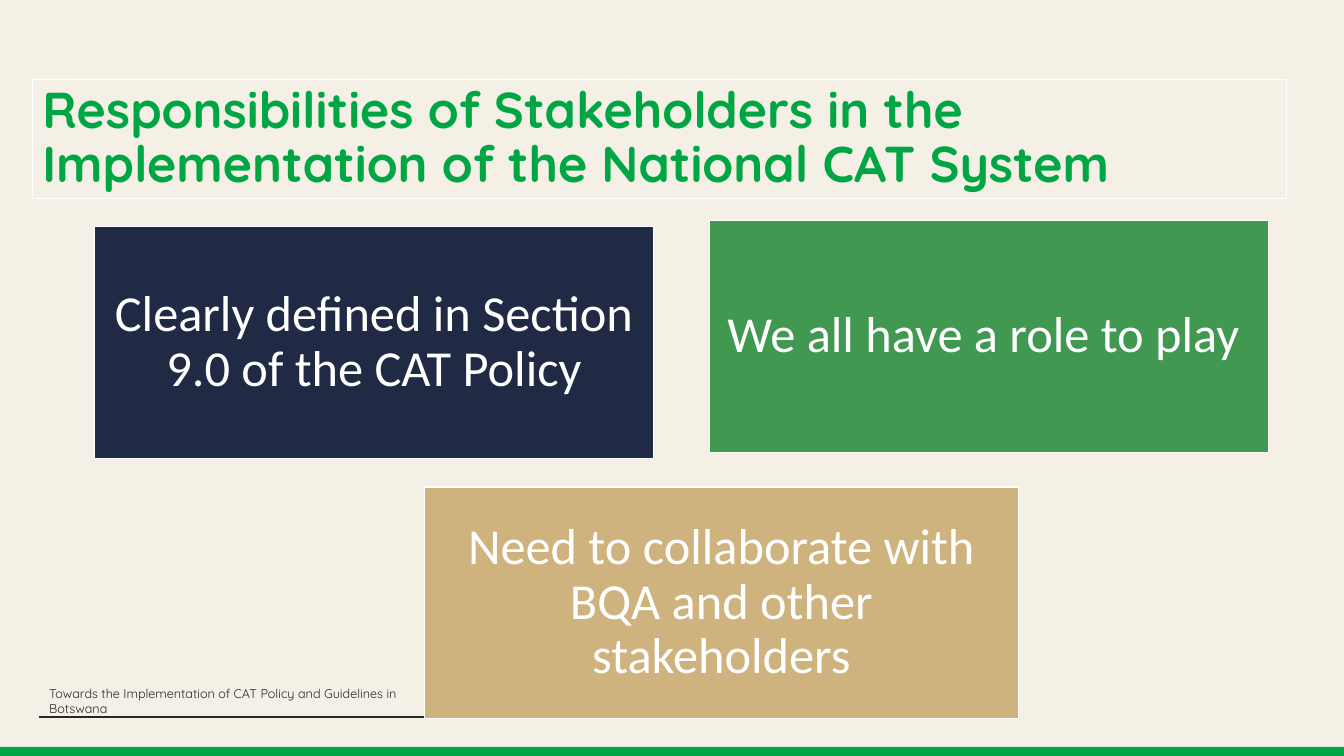
from dataclasses import dataclass

from pptx import Presentation
from pptx.dml.color import RGBColor
from pptx.enum.shapes import MSO_CONNECTOR as CONN, MSO_SHAPE as SHAPE
from pptx.enum.text import MSO_ANCHOR as ANCHOR, MSO_AUTO_SIZE as AUTO, PP_ALIGN as ALIGN
from pptx.oxml.ns import qn
from pptx.util import Inches, Pt
from lxml.etree import SubElement


@dataclass(frozen=True)
class Theme:
    cream: str = "F5F0E5"
    green: str = "00A643"
    ink: str = "24282A"
    white: str = "FFFFFF"
    navy: str = "202A44"
    leaf: str = "409851"
    sand: str = "CEB37E"
    heading_font: str = "Quicksand"
    card_font: str = "Calibri"
    large: int = 36
    small: int = 9


@dataclass(frozen=True)
class Card:
    text: str
    left: float
    top: float
    width: float
    fill: str


THEME = Theme()
CARD_HEIGHT = 2.3
CARDS = [
    Card("Clearly defined in Section 9.0 of the CAT Policy", 0.94, 2.25, 5.54, THEME.navy),
    Card("We all have a role to play ", 7.04, 2.19, 5.54, THEME.leaf),
    Card("Need to collaborate with BQA and other stakeholders", 4.21, 4.83, 5.89, THEME.sand),
]


def rgb(color: str) -> RGBColor:
    return RGBColor.from_string(color)


def place(s, left: float, top: float, width: float, height: float) -> None:
    s.left, s.top, s.width, s.height = map(Inches, (left, top, width, height))


def paint(s, fill: str, line: str | None = None) -> None:
    s.fill.solid()
    s.fill.fore_color.rgb = rgb(fill)
    if line:
        s.line.color.rgb = rgb(line)
        s.line.width = Pt(1)
    else:
        s.line.fill.background()


def write(s, text: str, *, size: int, font: str, color: str, bold: bool = False,
          align=ALIGN.LEFT, spacing: float = 1.0, inset: float | None = None) -> None:
    tf = s.text_frame
    tf.word_wrap = True
    tf.auto_size = AUTO.NONE
    tf.vertical_anchor = ANCHOR.MIDDLE
    if inset is not None:
        tf.margin_left = tf.margin_right = tf.margin_top = tf.margin_bottom = Inches(inset)
    p = tf.paragraphs[0]
    p.alignment = align
    p.line_spacing = spacing
    r = p.add_run()
    r.text = text
    r.font.size = Pt(size)
    r.font.name = font
    r.font.bold = bold
    r.font.color.rgb = rgb(color)


def add_block(slide, left: float, top: float, width: float, height: float,
              fill: str, line: str | None = None):
    s = slide.shapes.add_shape(SHAPE.RECTANGLE, *map(Inches, (left, top, width, height)))
    s.shadow.inherit = False
    paint(s, fill, line)
    return s


def add_rule(slide, left: float, right: float, y: float) -> None:
    s = slide.shapes.add_connector(CONN.STRAIGHT, *map(Inches, (left, y, right, y)))
    s.line.color.rgb = rgb(THEME.ink)
    s.line.width = Pt(1.5)
    SubElement(s._element.spPr, qn("a:effectLst"))


def add_card(slide, card: Card) -> None:
    s = add_block(slide, card.left, card.top, card.width, CARD_HEIGHT, card.fill, THEME.white)
    write(s, card.text, size=THEME.large, font=THEME.card_font, color=THEME.white,
          align=ALIGN.CENTER, spacing=0.9, inset=0.15)


def main() -> None:
    prs = Presentation()
    prs.slide_width, prs.slide_height = Inches(13.33), Inches(7.5)
    slide = prs.slides.add_slide(prs.slide_layouts[5])
    slide.background.fill.solid()
    slide.background.fill.fore_color.rgb = rgb(THEME.cream)

    add_block(slide, 0, 7.41, 13.33, 0.09, THEME.green)
    add_rule(slide, 0.39, 4.24, 7.11)

    title = slide.shapes.title
    place(title, 0.32, 0.79, 12.44, 1.18)
    paint(title, THEME.cream, THEME.white)
    write(title, "Responsibilities of Stakeholders in the Implementation of the National CAT System",
          size=THEME.large, font=THEME.heading_font, color=THEME.green, bold=True, spacing=0.9)

    for card in CARDS:
        add_card(slide, card)

    footer = slide.shapes.add_textbox(*map(Inches, (0.39, 6.86, 4.06, 0.19)))
    write(footer, "Towards the Implementation of CAT Policy and Guidelines in Botswana",
          size=THEME.small, font=THEME.heading_font, color=THEME.ink)
    prs.save("out.pptx")


if __name__ == "__main__":
    main()
